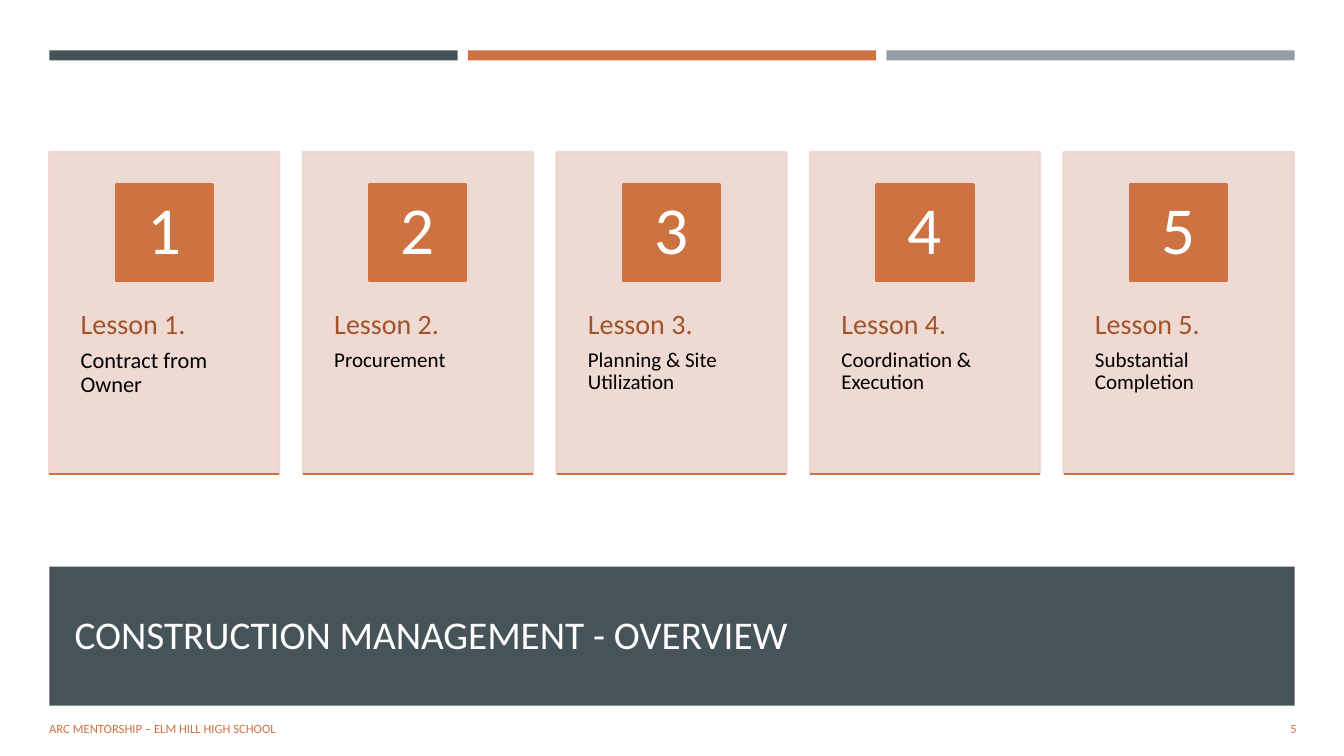
from lxml import etree
from pptx import Presentation
from pptx.dml.color import RGBColor
from pptx.enum.shapes import MSO_CONNECTOR, MSO_SHAPE
from pptx.enum.text import MSO_ANCHOR, MSO_AUTO_SIZE, PP_ALIGN
from pptx.oxml.ns import qn
from pptx.util import Pt

RECTANGLE = MSO_SHAPE.RECTANGLE
STRAIGHT = MSO_CONNECTOR.STRAIGHT
MIDDLE, TOP = MSO_ANCHOR.MIDDLE, MSO_ANCHOR.TOP
NO_AUTOFIT = MSO_AUTO_SIZE.NONE
LEFT, CENTER, RIGHT = PP_ALIGN.LEFT, PP_ALIGN.CENTER, PP_ALIGN.RIGHT

EMU_PER_PX = 9144
FONT = "Calibri"
COLORS = {
    "background": "FFFFFF",
    "slate": "465359",
    "orange": "CE7242",
    "gray": "969FA7",
    "card": "EDD5CF",
    "lesson": "A2532A",
    "topic": "000000",
    "numeral": "FFFFFF",
    "title": "FFFEFF",
}
LESSONS = [
    ("Contract from Owner", 16),
    ("Procurement", 15),
    ("Planning & Site Utilization", 15),
    ("Coordination & Execution", 15),
    ("Substantial Completion", 15),
]


def px(*lengths):
    return [round(length * EMU_PER_PX) for length in lengths]


def color(name):
    return RGBColor.from_string(COLORS[name])


def add_rectangle(slide, box, fill, outlined=False):
    rectangle = slide.shapes.add_shape(RECTANGLE, *px(*box))
    rectangle.shadow.inherit = False
    rectangle.fill.solid()
    rectangle.fill.fore_color.rgb = color(fill)
    if outlined:
        rectangle.line.color.rgb = color(fill)
        rectangle.line.width = Pt(1.75)
    else:
        rectangle.line.fill.background()
    return rectangle


def set_frame(frame, anchor, margins=(10, 5, 10, 5)):
    frame.word_wrap = True
    frame.auto_size = NO_AUTOFIT
    frame.vertical_anchor = anchor
    (frame.margin_left, frame.margin_top,
     frame.margin_right, frame.margin_bottom) = px(*margins)


def set_paragraph(paragraph, text, size, ink, align=LEFT, spacing=1.0, after=0):
    paragraph.text = text
    paragraph.alignment = align
    paragraph.line_spacing = spacing
    paragraph.space_after = Pt(after)
    paragraph.font.name = FONT
    paragraph.font.size = Pt(size)
    paragraph.font.color.rgb = color(ink)


def add_top_bars(slide, box):
    left, top, width, height = box
    bar_width = 405
    pitch = (width - bar_width) / 2
    for index, fill in enumerate(("slate", "orange", "gray")):
        add_rectangle(slide, (left + index * pitch, top, bar_width, height), fill)


def add_title_band(slide, box):
    left, top, width, height = box
    band = add_rectangle(slide, box, "slate")
    title = slide.shapes.title
    title.left, title.top, title.width, title.height = px(
        left + 15, top + 14, width - 29, height - 33)
    set_frame(title.text_frame, MIDDLE)
    set_paragraph(title.text_frame.paragraphs[0],
                  "CONSTRUCTION MANAGEMENT - OVERVIEW", 28, "title")
    band._element.addnext(title._element)


def add_footer(slide, box):
    left, top, width, height = box
    number_width = 115
    parts = [
        ("ARC MENTORSHIP – ELM HILL HIGH SCHOOL", left, 756, LEFT),
        ("5", left + width - number_width, number_width, RIGHT),
    ]
    for text, part_left, part_width, align in parts:
        footer = slide.shapes.add_textbox(*px(part_left, top, part_width, height))
        set_frame(footer.text_frame, MIDDLE)
        set_paragraph(footer.text_frame.paragraphs[0], text, 9, "orange", align, after=6)


def add_lesson_card(slide, box, number, topic, topic_size):
    left, top, width, height = box
    card = add_rectangle(slide, box, "card", outlined=True)
    for tint in card._element.spPr.iter(qn("a:srgbClr")):
        etree.SubElement(tint, qn("a:alpha"), val="90000")

    caption = slide.shapes.add_textbox(*px(left, top + 121, width, 192)).text_frame
    set_frame(caption, TOP, (31, 36, 18, 36))
    set_paragraph(caption.paragraphs[0], f"Lesson {number}.", 20, "lesson",
                  spacing=0.9, after=6)
    set_paragraph(caption.add_paragraph(), topic, topic_size, "topic",
                  spacing=0.9, after=6)

    side = 96
    badge = add_rectangle(
        slide, (left + (width - side) / 2, top + 32, side, side), "orange", outlined=True)
    set_frame(badge.text_frame, MIDDLE, (7, 1, 7, 1))
    set_paragraph(badge.text_frame.paragraphs[0], str(number), 48, "numeral",
                  CENTER, 0.9)

    bottom = top + height
    underline = slide.shapes.add_connector(
        STRAIGHT, *px(left, bottom, left + width, bottom))
    underline.line.color.rgb = color("orange")
    underline.line.width = Pt(1.75)
    etree.SubElement(underline._element.spPr, qn("a:effectLst"))


def add_lessons(slide, box):
    left, top, width, height = box
    card_width = 228
    pitch = (width - card_width) / (len(LESSONS) - 1)
    for index, (topic, topic_size) in enumerate(LESSONS):
        card_box = (left + index * pitch, top, card_width, height)
        add_lesson_card(slide, card_box, index + 1, topic, topic_size)


def main():
    deck = Presentation()
    deck.slide_width, deck.slide_height = px(1333, 750)
    slide = deck.slides.add_slide(deck.slide_layouts[5])
    slide.background.fill.solid()
    slide.background.fill.fore_color.rgb = color("background")
    add_title_band(slide, (49, 562, 1235, 138))
    add_top_bars(slide, (49, 50, 1235, 10))
    add_footer(slide, (39, 703, 1257, 40))
    add_lessons(slide, (49, 151, 1234, 319))
    deck.save("out.pptx")


if __name__ == "__main__":
    main()
